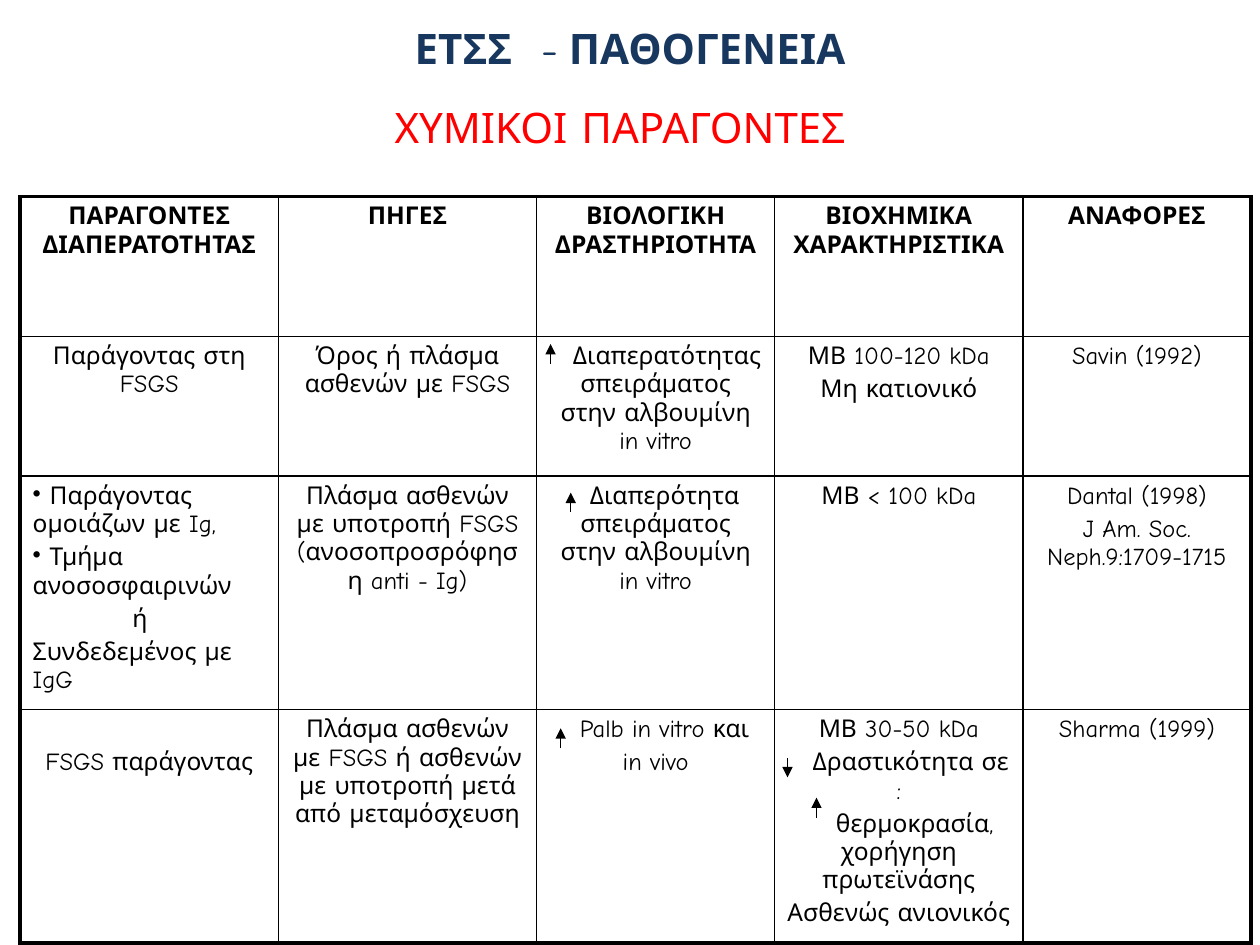
import pptx
import pptx.util
import pptx.dml.color
import pptx.enum.shapes
import pptx.enum.text
import pptx.oxml
import pptx.oxml.ns

Inches, Pt = pptx.util.Inches, pptx.util.Pt
ALIGN = pptx.enum.text.PP_ALIGN
FONT = "Comic Neue"
COLORS = {"title": "17375E", "subtitle": "FF0000", "ink": "000000"}
COL_WIDTHS = [2.05, 2.05, 1.89, 1.97, 1.81]
ROW_HEIGHTS = [1.11, 1.11, 1.85, 1.85]

# A cell is a list of paragraphs; a pair is (text, first-line indent in inches).
HEADER = [["ΠΑΡΑΓΟΝΤΕΣ ΔΙΑΠΕΡΑΤΟΤΗΤΑΣ"], ["ΠΗΓΕΣ"], ["ΒΙΟΛΟΓΙΚΗ ΔΡΑΣΤΗΡΙΟΤΗΤΑ"],
          ["ΒΙΟΧΗΜΙΚΑ ΧΑΡΑΚΤΗΡΙΣΤΙΚΑ"], ["ΑΝΑΦΟΡΕΣ"]]
FACTORS = [
    [["Παράγοντας στη FSGS"],
     ["Όρος ή πλάσμα ασθενών με FSGS"],
     [("Διαπερατότητας σπειράματος στην αλβουμίνη in vitro", 0.18)],
     ["ΜΒ 100-120 kDa", "Μη κατιονικό"],
     ["Savin (1992)"]],
    [["• Παράγοντας ομοιάζων με Ig,", "• Τμήμα ανοσοσφαιρινών",
      ("ή", 0.79), "Συνδεδεμένος με IgG"],
     ["Πλάσμα ασθενών με υποτροπή FSGS (ανοσοπροσρόφηση anti - Ig)"],
     [("Διαπερότητα σπειράματος στην αλβουμίνη in vitro", 0.14)],
     ["ΜΒ < 100 kDa"],
     ["Dantal (1998)", "J Am. Soc. Neph.9:1709-1715"]],
    [["FSGS παράγοντας"],
     ["Πλάσμα ασθενών με FSGS ή ασθενών με υποτροπή μετά από μεταμόσχευση"],
     [("Palb in vitro και", 0.14), "in vivo"],
     ["ΜΒ 30-50 kDa", ("Δραστικότητα σε :", 0.19),
      ("θερμοκρασία, χορήγηση πρωτεϊνάσης", 0.25), "Ασθενώς ανιονικός"],
     ["Sharma (1999)"]],
]
# x, y of the tail, y of the head
ARROWS = [(4.37, 2.89, 2.73), (4.53, 4.06, 3.91), (6.25, 6.02, 6.17),
          (6.48, 6.49, 6.33), (4.45, 5.94, 5.78)]


def rgb(name):
    return pptx.dml.color.RGBColor.from_string(COLORS[name])


def format_run(r, size, color, bold=False):
    r.font.name = FONT
    r.font.size = Pt(size)
    r.font.bold = bold
    r.font.color.rgb = rgb(color)


def add_heading(s, left, top, width, runs, color):
    """Centred line of text; runs are (text, size, bold)."""
    tf = s.shapes.add_textbox(Inches(left), Inches(top), Inches(width), Inches(0.5)).text_frame
    tf.word_wrap = True
    tf.auto_size = pptx.enum.text.MSO_AUTO_SIZE.SHAPE_TO_FIT_TEXT
    p = tf.paragraphs[0]
    p.alignment = ALIGN.CENTER
    for text, size, bold in runs:
        r = p.add_run()
        r.text = text
        format_run(r, size, color, bold)


def set_borders(cell, widths):
    """Border widths in points, in the order left, right, top, bottom."""
    tcPr = cell._tc.get_or_add_tcPr()
    for i, (side, width) in enumerate(zip("LRTB", widths)):
        tcPr.insert(i, pptx.oxml.parse_xml(
            f'<a:ln{side} {pptx.oxml.ns.nsdecls("a")} w="{Pt(width)}"><a:solidFill>'
            f'<a:srgbClr val="{COLORS["ink"]}"/></a:solidFill></a:ln{side}>'))


def fill_cell(cell, paragraphs, bold):
    tf = cell.text_frame
    listed = paragraphs[0].startswith("•") if isinstance(paragraphs[0], str) else False
    for i, item in enumerate(paragraphs):
        text, indent = (item, 0) if isinstance(item, str) else item
        p = tf.paragraphs[0] if i == 0 else tf.add_paragraph()
        p.text = text.removeprefix("•")
        p.alignment = ALIGN.LEFT if listed else ALIGN.CENTER
        if i:
            p.space_before = Pt(2.8)
        pPr = p._p.get_or_add_pPr()
        pPr.set("marL", "0")
        pPr.set("indent", str(Inches(indent)))
        if text.startswith("•"):
            pPr.append(pptx.oxml.parse_xml(
                f'<a:buChar {pptx.oxml.ns.nsdecls("a")} char="•"/>'))
        format_run(p.runs[0], 14, "ink", bold)


def add_factor_table(s):
    rows = [HEADER] + FACTORS
    last_row, last_col = len(rows) - 1, len(HEADER) - 1
    table = s.shapes.add_table(len(rows), len(HEADER), Inches(0.16), Inches(1.56),
                               Inches(sum(COL_WIDTHS)), Inches(sum(ROW_HEIGHTS))).table
    table.first_row = table.horz_banding = False
    for column, width in zip(table.columns, COL_WIDTHS):
        column.width = Inches(width)
    for row, height in zip(table.rows, ROW_HEIGHTS):
        row.height = Inches(height)
    for i, row in enumerate(rows):
        for j, paragraphs in enumerate(row):
            cell = table.cell(i, j)
            fill_cell(cell, paragraphs, bold=i == 0)
            cell.fill.background()
            outer = (j == 0, j == last_col, i == 0, i == last_row)
            set_borders(cell, [2.25 if edge else 1 for edge in outer])
    table.cell(last_row, 0).margin_top = Inches(0.31)


def add_arrow(s, x, start, end):
    line = s.shapes.add_connector(pptx.enum.shapes.MSO_CONNECTOR.STRAIGHT,
                                  Inches(x), Inches(start), Inches(x), Inches(end))
    line.line.width = Pt(0.75)
    line.line.color.rgb = rgb("ink")
    ns = pptx.oxml.ns.nsdecls("a")
    line.line._get_or_add_ln().append(
        pptx.oxml.parse_xml(f'<a:tailEnd {ns} type="triangle"/>'))
    line._element.spPr.append(pptx.oxml.parse_xml(f"<a:effectLst {ns}/>"))


def main():
    prs = pptx.Presentation()
    prs.slide_width, prs.slide_height = Inches(10), Inches(7.5)
    s = prs.slides.add_slide(prs.slide_layouts[6])
    add_heading(s, 0, 0.13, 10, [("ΕΤΣΣ ", 24, True), (" -", 24, False), (" ", 18, False),
                                 ("ΠΑΘΟΓΕΝΕΙΑ", 24, True)], "title")
    add_heading(s, 1.69, 0.76, 6.46, [("ΧΥΜΙΚΟΙ ΠΑΡΑΓΟΝΤΕΣ", 24, False)], "subtitle")
    add_factor_table(s)
    for x, start, end in ARROWS:
        add_arrow(s, x, start, end)
    prs.save("out.pptx")


if __name__ == "__main__":
    main()
